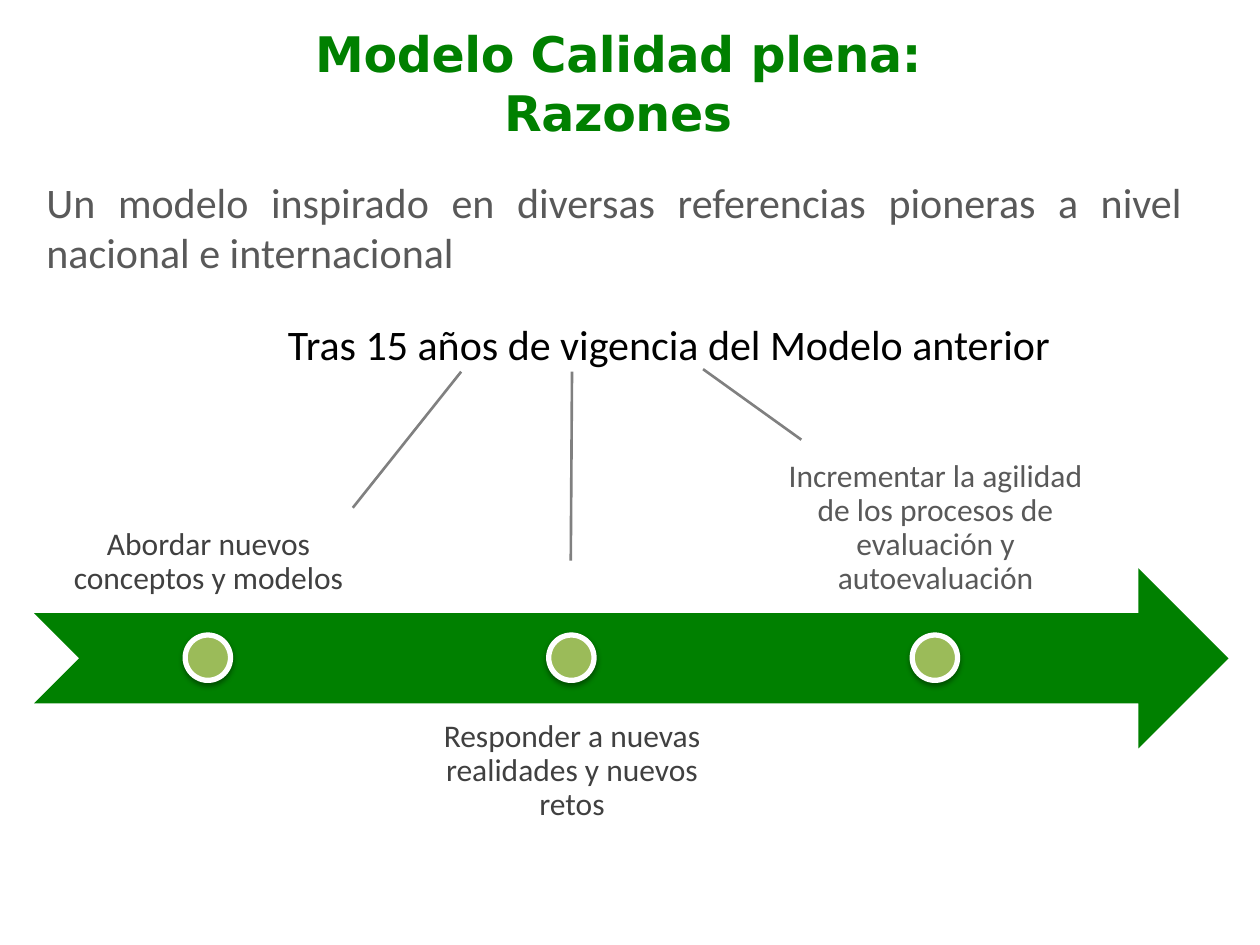
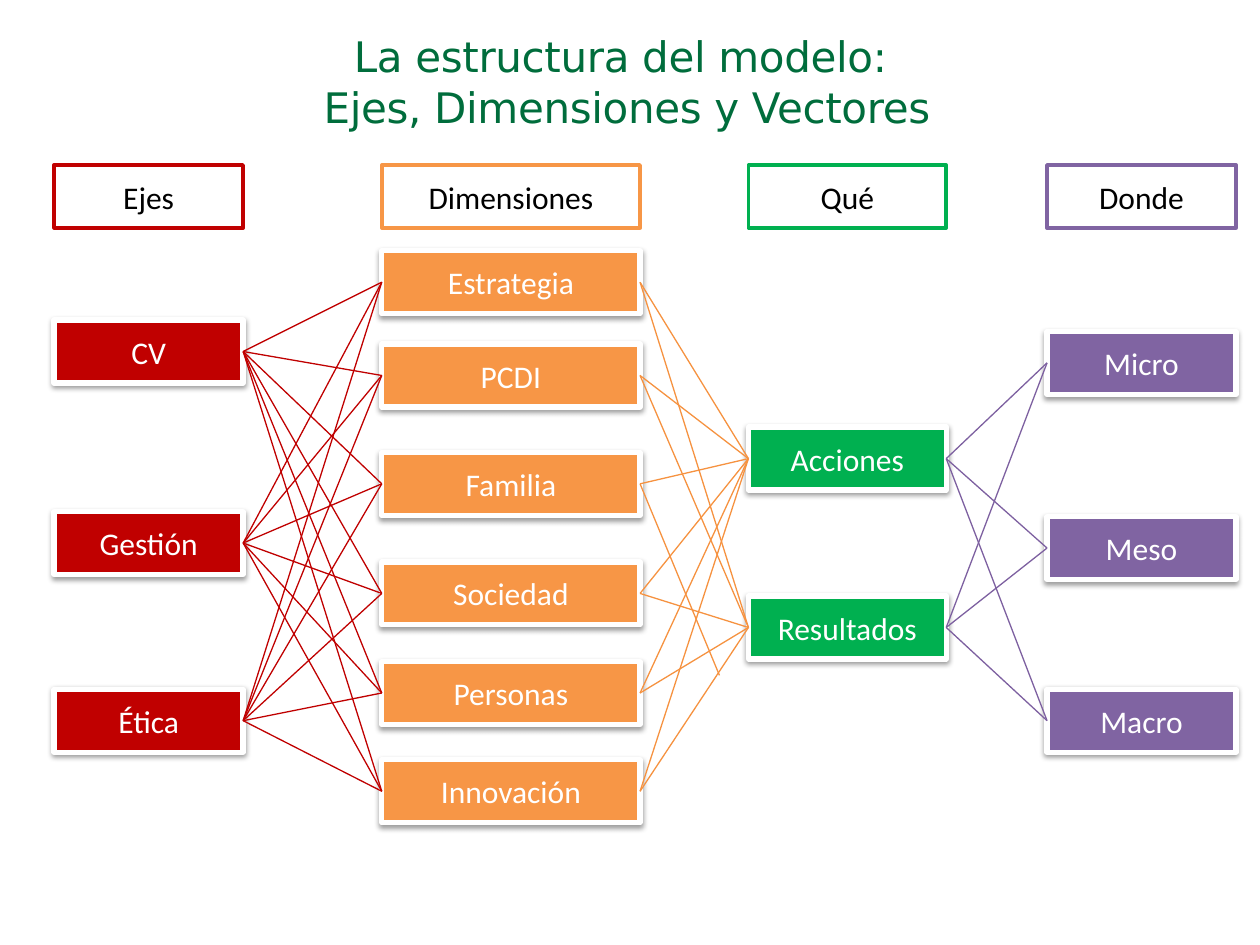
"""Builds two slides on the quality model: its reasons and its structure."""
from dataclasses import dataclass

import lxml.etree
import pptx
import pptx.dml.color
import pptx.enum.shapes
import pptx.enum.text
import pptx.oxml
import pptx.oxml.ns
import pptx.util

Inches = pptx.util.Inches
Pt = pptx.util.Pt
Align = pptx.enum.text.PP_ALIGN
Anchor = pptx.enum.text.MSO_ANCHOR
Preset = pptx.enum.shapes.MSO_SHAPE
RIGHT, LEFT = 3, 1


@dataclass(frozen=True)
class Theme:
    title_font: str = "DejaVu Sans"
    body_font: str = "Calibri"
    white: str = "FFFFFF"
    black: str = "000000"
    green: str = "008000"
    title_green: str = "006D3C"
    dark: str = "404040"
    muted: str = "595959"
    pointer: str = "808080"
    dot: str = "9BBB59"
    red: str = "C00000"
    orange: str = "F79646"
    orange_link: str = "F69240"
    emerald: str = "00B050"
    purple: str = "8064A2"
    purple_link: str = "7D60A0"
    title_size: int = 28
    lead_size: int = 24
    label_size: int = 18


def rgb(value):
    return pptx.dml.color.RGBColor.from_string(value)


class Builder:
    def __init__(self, deck, theme):
        self.deck = deck
        self.theme = theme
        self.page = None

    def new_page(self):
        self.page = self.deck.slides.add_slide(self.deck.slide_layouts[6])

    def set_text(self, box, text, size, color, align=Align.CENTER, anchor=Anchor.TOP,
                 margins=(0.1, 0.05, 0.1, 0.05), font=None, bold=False, spacing=None,
                 indent=0, tracking=None):
        frame = box.text_frame
        frame.text = text
        frame.word_wrap = True
        frame.vertical_anchor = anchor
        (frame.margin_left, frame.margin_top,
         frame.margin_right, frame.margin_bottom) = map(Inches, margins)
        para = frame.paragraphs[0]
        para.alignment = align
        if spacing:
            para.line_spacing = spacing
        if indent:
            para._p.get_or_add_pPr().set("marL", str(Inches(indent)))
        for span in para.runs:
            span.font.name = font or self.theme.body_font
            span.font.size = Pt(size)
            span.font.bold = bold
            span.font.color.rgb = rgb(color)
            if tracking:
                span._r.get_or_add_rPr().set("spc", str(tracking))

    def text(self, area, text, size, color, **style):
        box = self.page.shapes.add_textbox(*map(Inches, area))
        self.set_text(box, text, size, color, **style)

    def title(self, area, text, size, color, top_margin, **style):
        self.text(area, text, size, color, anchor=Anchor.MIDDLE, tracking=-20,
                  margins=(0, top_margin, 0, 0), font=self.theme.title_font, **style)

    def shape(self, preset, area, fill, line=None, width=3, shadow=False):
        shape = self.page.shapes.add_shape(preset, *map(Inches, area))
        shape.shadow.inherit = False
        shape.fill.solid()
        shape.fill.fore_color.rgb = rgb(fill)
        if line:
            shape.line.color.rgb = rgb(line)
            shape.line.width = Pt(width)
        else:
            shape.line.fill.background()
        if shadow:
            self.add_shadow(shape)
        return shape

    def add_shadow(self, shape):
        effects = shape._element.spPr.find(pptx.oxml.ns.qn("a:effectLst"))
        effects.append(pptx.oxml.parse_xml(
            f'<a:outerShdw {pptx.oxml.ns.nsdecls("a")} blurRad="{Pt(3.1)}" '
            f'dist="{Pt(1.6)}" dir="5400000" rotWithShape="0">'
            f'<a:srgbClr val="{self.theme.black}"><a:alpha val="38000"/></a:srgbClr>'
            '</a:outerShdw>'))

    def box(self, area, text, fill, line, color, width=3, shadow=False):
        box = self.shape(Preset.RECTANGLE, area, fill, line, width, shadow)
        self.set_text(box, text, self.theme.label_size, color, anchor=Anchor.MIDDLE)
        return box

    def line(self, start, end, color, width):
        line = self.page.shapes.add_connector(
            pptx.enum.shapes.MSO_CONNECTOR.STRAIGHT, *map(Inches, start + end))
        line.line.color.rgb = rgb(color)
        line.line.width = Pt(width)
        lxml.etree.SubElement(line._element.spPr, pptx.oxml.ns.qn("a:effectLst"))
        return line

    def link(self, source, target, color, loose_end=None):
        line = self.line((0, 0), loose_end or (0, 0), color, 0.75)
        line.begin_connect(source, RIGHT)
        if not loose_end:
            line.end_connect(target, LEFT)


def build_reasons(builder):
    theme = builder.theme
    builder.new_page()
    builder.title((2.02, -0.11, 5.72, 1.24), "Modelo Calidad plena: Razones",
                  theme.title_size, theme.green, 0.29, bold=True, indent=0.05)
    builder.shape(Preset.NOTCHED_RIGHT_ARROW, (0.27, 4.51, 9.48, 1.43), theme.green)
    reasons = [
        ("Abordar nuevos conceptos y modelos", 3.44, Anchor.BOTTOM, theme.dark),
        ("Responder a nuevas realidades y nuevos retos", 5.58, Anchor.TOP, theme.dark),
        ("Incrementar la agilidad de los procesos de evaluación y autoevaluación",
         3.44, Anchor.BOTTOM, theme.muted),
    ]
    for index, (reason, top, anchor, color) in enumerate(reasons):
        left = 0.28 + index * 2.885
        builder.text((left, top, 2.75, 1.43), reason, theme.label_size, color,
                     anchor=anchor, margins=(0.14,) * 4, spacing=0.9)
        builder.shape(Preset.OVAL, (left + 1.19, 5.04, 0.36, 0.36), theme.dot,
                      theme.white, shadow=True)
    builder.text((1.29, 2.48, 8.03, 0.5), "Tras 15 años de vigencia del Modelo anterior",
                 theme.lead_size, theme.black, indent=0.01)
    for start, end in (((3.66, 2.95), (2.8, 4.03)), ((4.54, 2.95), (4.53, 4.45)),
                       ((5.58, 2.93), (6.36, 3.49))):
        builder.line(start, end, theme.pointer, 1.5)
    builder.text((0.27, 1.35, 9.21, 0.91),
                 "Un modelo inspirado en diversas referencias pioneras a nivel "
                 "nacional e internacional",
                 theme.lead_size, theme.muted, align=Align.JUSTIFY)


def build_structure(builder):
    theme = builder.theme
    builder.new_page()
    builder.title((1.77, 0.02, 5.91, 1.03),
                  "La estructura del modelo: \vEjes, Dimensiones y Vectores",
                  theme.lead_size, theme.title_green, 0.22, indent=0.5)
    columns = [
        ("Ejes", 0.43, 1.5, theme.red,
         {"CV": 2.54, "Gestión": 4.06, "Ética": 5.47}),
        ("Dimensiones", 3.03, 2.05, theme.orange,
         {"Estrategia": 1.99, "PCDI": 2.73, "Familia": 3.59, "Sociedad": 4.46,
          "Personas": 5.25, "Innovación": 6.03}),
        ("Qué", 5.94, 1.57, theme.emerald, {"Acciones": 3.39, "Resultados": 4.73}),
        ("Donde", 8.31, 1.5, theme.purple,
         {"Micro": 2.63, "Meso": 4.1, "Macro": 5.47}),
    ]
    levels = []
    for heading, left, width, color, tops in columns:
        builder.box((left, 1.31, width, 0.5), heading, theme.white, color,
                    theme.black, width=2)
        levels.append({
            name: builder.box((left, top, width, 0.5), name, color, theme.white,
                              theme.white, shadow=True)
            for name, top in tops.items()})
    loose_ends = {("Familia", "Resultados"): (5.71, 5.36)}
    link_colors = (theme.red, theme.orange_link, theme.purple_link)
    for sources, targets, color in zip(levels, levels[1:], link_colors):
        for source_name, source in sources.items():
            for target_name, target in targets.items():
                builder.link(source, target, color,
                             loose_ends.get((source_name, target_name)))


def main():
    deck = pptx.Presentation()
    deck.slide_width, deck.slide_height = Inches(10), Inches(7.5)
    builder = Builder(deck, Theme())
    build_reasons(builder)
    build_structure(builder)
    deck.save("out.pptx")


if __name__ == "__main__":
    main()
